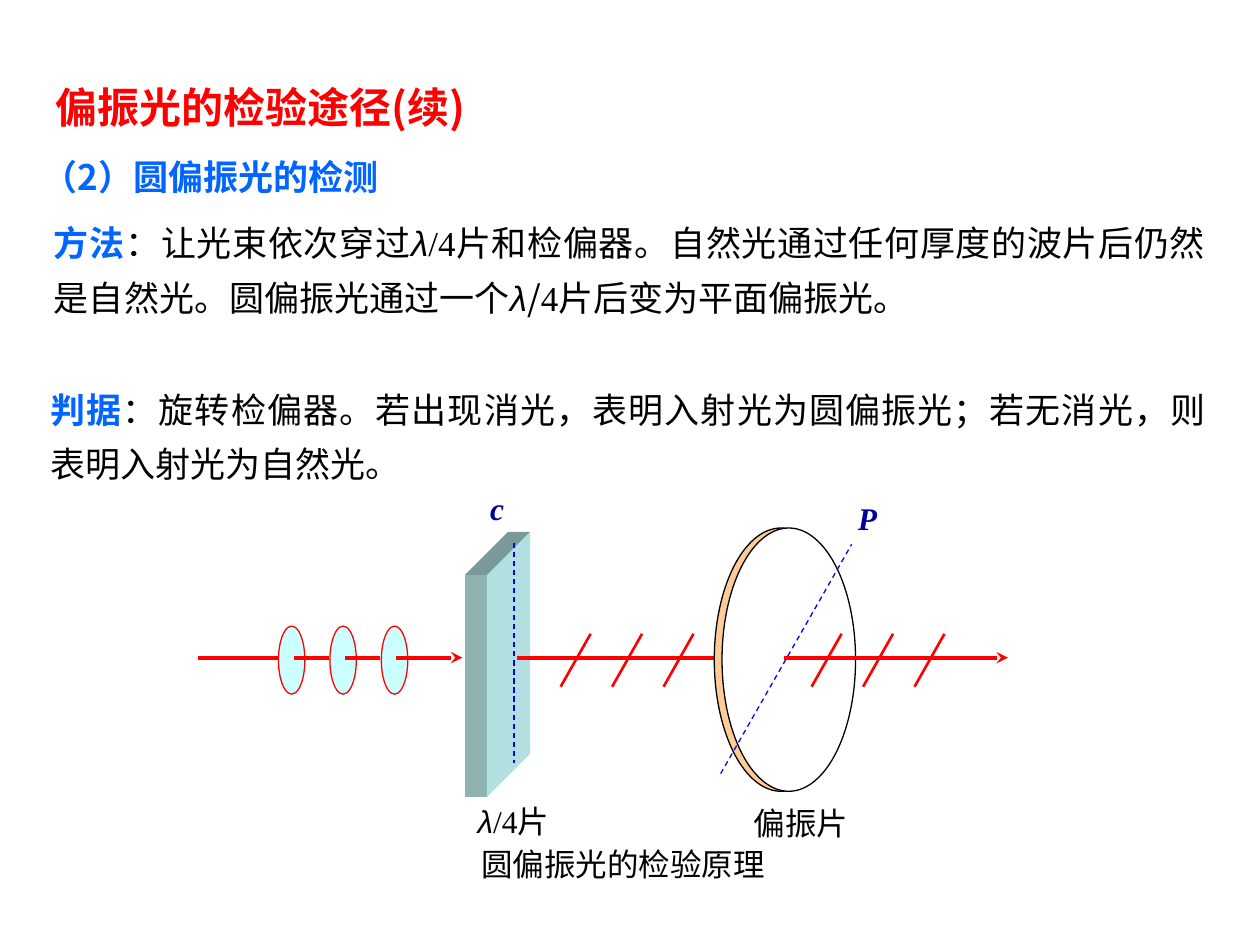
"""Builds a slide on testing circularly polarised light with a quarter-wave plate."""
from dataclasses import dataclass
from typing import NamedTuple

from lxml.etree import SubElement
from pptx import Presentation
from pptx.dml.color import RGBColor
from pptx.enum.dml import MSO_LINE
from pptx.enum.shapes import MSO_CONNECTOR, MSO_SHAPE
from pptx.enum.text import PP_ALIGN
from pptx.oxml.ns import qn
from pptx.util import Pt


@dataclass(frozen=True)
class Theme:
    cjk: str = "Noto Sans CJK SC"
    serif: str = "Times New Roman"
    sans: str = "Arial"
    title: int = 24
    body: int = 20
    label: int = 18
    red: str = "FF0000"
    blue: str = "0066FF"
    navy: str = "000099"
    axis: str = "0000FF"
    black: str = "000000"
    white: str = "FFFFFF"
    disc: str = "CCFFFF"
    rim: str = "FFCC99"
    plate_front: str = "8FB3B3"
    plate_side: str = "B2DFDF"
    plate_top: str = "7A9999"
    thin: float = 0.75
    medium: float = 1.5
    thick: float = 2.25


T = Theme()


class Span(NamedTuple):
    text: str
    font: str = T.cjk
    color: str = T.black
    bold: bool = False
    italic: bool = False


class Text(NamedTuple):
    box: tuple[float, float, float, float]
    size: int
    spans: list[Span]
    align: PP_ALIGN = PP_ALIGN.CENTER
    spacing: float = 1.0
    inset: tuple[float, float] = (0, 0)


class Line(NamedTuple):
    start: tuple[float, float]
    end: tuple[float, float]
    color: str = T.red
    width: float = T.thick
    dashed: bool = False
    arrow: bool = False


class Oval(NamedTuple):
    box: tuple[float, float, float, float]
    fill: str
    line: str


class Face(NamedTuple):
    points: list[tuple[float, float]]
    fill: str


def draw_text(s, item: Text) -> None:
    tf = s.shapes.add_textbox(*map(Pt, item.box)).text_frame
    tf.word_wrap = True
    tf.margin_left = tf.margin_right = Pt(item.inset[0])
    tf.margin_top = tf.margin_bottom = Pt(item.inset[1])
    p = tf.paragraphs[0]
    p.alignment = item.align
    p.line_spacing = item.spacing
    for span in item.spans:
        r = p.add_run()
        r.text = span.text
        r.font.size = Pt(item.size)
        r.font.name = span.font
        r.font.bold = span.bold
        r.font.italic = span.italic
        r.font.color.rgb = RGBColor.from_string(span.color)
        SubElement(r.font._element, qn("a:ea"), typeface=span.font)


def draw_line(s, item: Line) -> None:
    sp = s.shapes.add_connector(MSO_CONNECTOR.STRAIGHT, *map(Pt, item.start + item.end))
    sp.line.color.rgb = RGBColor.from_string(item.color)
    sp.line.width = Pt(item.width)
    if item.dashed:
        sp.line.dash_style = MSO_LINE.DASH
    if item.arrow:
        SubElement(sp.line._get_or_add_ln(), qn("a:tailEnd"), type="stealth")
    SubElement(sp._element.spPr, qn("a:effectLst"))


def fill_shape(sp, color: str) -> None:
    sp.shadow.inherit = False
    sp.fill.solid()
    sp.fill.fore_color.rgb = RGBColor.from_string(color)


def draw_oval(s, item: Oval) -> None:
    sp = s.shapes.add_shape(MSO_SHAPE.OVAL, *map(Pt, item.box))
    fill_shape(sp, item.fill)
    sp.line.color.rgb = RGBColor.from_string(item.line)
    sp.line.width = Pt(T.thin)


def draw_face(s, item: Face) -> None:
    points = [(Pt(x), Pt(y)) for x, y in item.points]
    fb = s.shapes.build_freeform(*points[0])
    fb.add_line_segments(points[1:], close=True)
    sp = fb.convert_to_shape()
    fill_shape(sp, item.fill)
    sp.line.fill.background()


BEAM_Y = 375.8
PITCH = 29.4

TEXTS = [
    Text((24.5, 43.2, 573, 36), T.title,
         [Span("偏振光的检验途径(续)", color=T.red, bold=True)], PP_ALIGN.LEFT, inset=(7.2, 3.6)),
    Text((24.5, 81.4, 652.3, 36.7), T.body,
         [Span("（2）圆偏振光的检测", color=T.blue, bold=True)], PP_ALIGN.JUSTIFY, 1.3),
    Text((30.8, 119.5, 658, 100), T.body,
         [Span("方法", color=T.blue, bold=True), Span("：让光束依次穿过"),
          Span("λ", T.sans, italic=True), Span("/4", T.serif),
          Span("片和检偏器。自然光通过任何厚度的波片后仍然是自然光。圆偏振光通过一个"),
          Span("λ", T.sans, italic=True), Span("/"), Span("4", T.serif),
          Span("片后变为平面偏振光。")], PP_ALIGN.JUSTIFY, 1.3),
    Text((28.8, 214.6, 660.2, 69.8), T.body,
         [Span("判据", color=T.blue, bold=True),
          Span("：旋转检偏器。若出现消光，表明入射光为圆偏振光；若无消光，则表明入射光为自然光。")],
         PP_ALIGN.JUSTIFY, 1.3),
    Text((187.9, 483.1, 336.2, 26.6), T.label, [Span("圆偏振光的检验原理")]),
    Text((259.9, 458.6, 67, 23.8), T.label,
         [Span("λ", T.sans, italic=True), Span("/4", T.serif), Span("片")]),
    Text((420.5, 459.4, 74.2, 29.5), T.label, [Span("偏振片")]),
    Text((273.6, 279.4, 20.9, 27.4), T.label, [Span("c", T.serif, T.navy, True, True)]),
    Text((486.7, 285.1, 18, 23.8), T.label, [Span("P", T.serif, T.navy, True, True)]),
]


def beam(x1: float, x2: float, arrow: bool = False) -> Line:
    return Line((x1, BEAM_Y), (x2, BEAM_Y), arrow=arrow)


def strokes(left: float) -> list[Line]:
    return [Line((x + 17.1, 362.2), (x, 392.4), width=T.medium)
            for x in (left + i * PITCH for i in range(3))]


def plate() -> list[Face]:
    x, y, w, h, d = 265.7, 328.6, 12.6, 126.8, 24.6
    return [
        Face([(x, y), (x + w, y), (x + w, y + h), (x, y + h)], T.plate_front),
        Face([(x + w, y), (x + w + d, y - d), (x + w + d, y + h - d), (x + w, y + h)],
             T.plate_side),
        Face([(x, y), (x + d, y - d), (x + w + d, y - d), (x + w, y)], T.plate_top),
    ]


DIAGRAM = [
    beam(113, 166.3),
    *(Oval((159.1 + i * PITCH, 357.8, 15.1, 38.9), T.disc, T.red) for i in range(3)),
    beam(167.8, 187.9), beam(197.3, 217.4), beam(226.1, 264.2, arrow=True),
    *plate(),
    Line((293.8, 310.3), (293.8, 436.3), T.axis, T.thin, dashed=True),
    beam(295.2, 447.8),
    *strokes(320.4),
    Oval((408.2, 301.7, 76.3, 150.5), T.rim, T.black),
    Oval((412.6, 301.7, 76.3, 150.5), T.white, T.black),
    Line((411.8, 442.1), (486.7, 311), T.axis, T.thin, dashed=True),
    *strokes(463.8),
    beam(447.8, 576, arrow=True),
]

DRAW = {Text: draw_text, Line: draw_line, Oval: draw_oval, Face: draw_face}


def main() -> None:
    prs = Presentation()
    prs.slide_width, prs.slide_height = Pt(720), Pt(540)
    s = prs.slides.add_slide(prs.slide_layouts[6])
    for item in DIAGRAM + TEXTS:
        DRAW[type(item)](s, item)
    prs.save("out.pptx")


if __name__ == "__main__":
    main()
